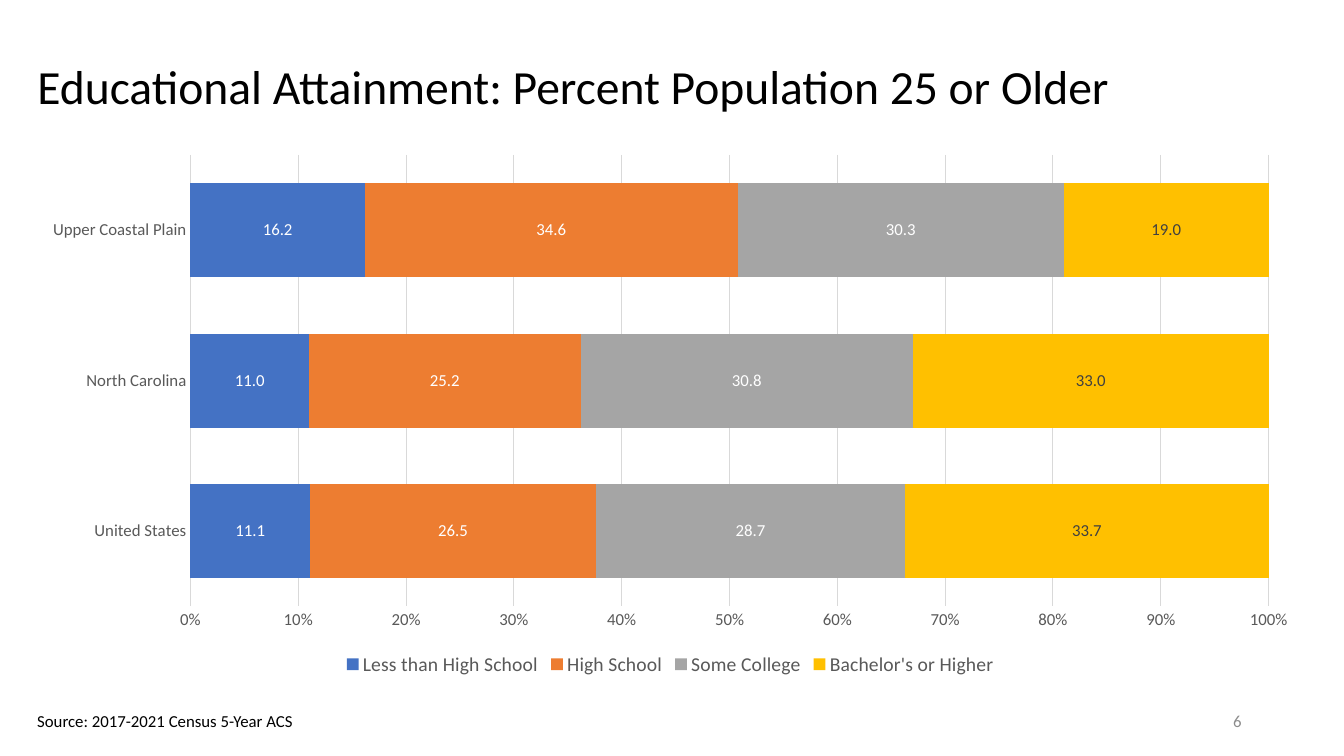
from dataclasses import dataclass

from pptx import Presentation
from pptx.chart.data import CategoryChartData
from pptx.dml.color import RGBColor
from pptx.enum import chart as ch, text as tx
from pptx.util import Pt

FONT = "Calibri"
GREY, RULE = "595959", "D9D9D9"
LEFT, WIDTH = 19.5, 918.5


@dataclass
class Level:
    name: str
    values: tuple[float, ...]
    fill: str
    label: str = "FFFFFF"


@dataclass
class Note:
    text: str
    box: tuple[float, float, float, float]
    color: str
    align: tx.PP_ALIGN
    anchor: tx.MSO_ANCHOR
    wrap: bool


REGIONS = ("United States", "North Carolina", "Upper Coastal Plain")
LEVELS = (
    Level("Less than High School", (11.1, 11.0, 16.2), "4472C4"),
    Level("High School", (26.5, 25.2, 34.6), "ED7D31"),
    Level("Some College", (28.7, 30.8, 30.3), "A5A5A5"),
    Level("Bachelor's or Higher", (33.7, 33.0, 19.0), "FFC000", "404040"),
)
NOTES = (
    Note("6", (678, 500.5, 216, 28.75), "8C8C8C",
         tx.PP_ALIGN.RIGHT, tx.MSO_ANCHOR.MIDDLE, True),
    Note("Source: 2017-2021 Census 5-Year ACS", (LEFT, 504, 200, 21.8), "000000",
         tx.PP_ALIGN.LEFT, tx.MSO_ANCHOR.TOP, False),
)


def paint(color_format, value: str) -> None:
    color_format.rgb = RGBColor.from_string(value)


def style(font, size: float, color: str) -> None:
    font.name, font.size, font.bold = FONT, Pt(size), False
    paint(font.color, color)


def rule(line) -> None:
    paint(line.color, RULE)
    line.width = Pt(0.75)


def place(shape, left: float, top: float, width: float, height: float) -> None:
    shape.left, shape.top = Pt(left), Pt(top)
    shape.width, shape.height = Pt(width), Pt(height)


def add_title(s, title: str) -> None:
    sp = s.shapes.title
    place(sp, LEFT, 24.5, WIDTH, 78.5)
    tf = sp.text_frame
    tf.text = title
    tf.vertical_anchor = tx.MSO_ANCHOR.MIDDLE
    p = tf.paragraphs[0]
    p.alignment, p.line_spacing = tx.PP_ALIGN.LEFT, 0.9
    style(p.runs[0].font, 34, "000000")


def add_note(s, note: Note) -> None:
    tf = s.shapes.add_textbox(*map(Pt, note.box)).text_frame
    tf.text = note.text
    tf.word_wrap, tf.vertical_anchor = note.wrap, note.anchor
    if not note.wrap:
        tf.auto_size = tx.MSO_AUTO_SIZE.SHAPE_TO_FIT_TEXT
    p = tf.paragraphs[0]
    p.alignment = note.align
    style(p.runs[0].font, 12, note.color)


def add_attainment_chart(s) -> None:
    data = CategoryChartData(number_format="#,##0.0")
    data.categories = REGIONS
    for level in LEVELS:
        data.add_series(level.name, level.values)
    box = map(Pt, (LEFT, 103, WIDTH, 383))
    chart = s.shapes.add_chart(ch.XL_CHART_TYPE.BAR_STACKED_100, *box, data).chart
    style(chart.font, 10, "000000")
    chart.has_title = False

    # Bars and their values
    plot = chart.plots[0]
    plot.gap_width, plot.overlap, plot.vary_by_categories = 60, 100, False
    for level, series in zip(LEVELS, plot.series):
        series.format.fill.solid()
        paint(series.format.fill.fore_color, level.fill)
        labels = series.data_labels
        labels.show_value = True
        labels.number_format, labels.number_format_is_linked = "#,##0.0", False
        labels.position = ch.XL_LABEL_POSITION.CENTER
        style(labels.font, 12, level.label)

    # Axes
    for axis in (chart.category_axis, chart.value_axis):
        axis.major_tick_mark = axis.minor_tick_mark = ch.XL_TICK_MARK.NONE
        style(axis.tick_labels.font, 12, GREY)
    rule(chart.category_axis.format.line)
    percent = chart.value_axis
    percent.minimum_scale, percent.maximum_scale, percent.major_unit = 0, 1, 0.1
    percent.has_major_gridlines = True
    rule(percent.major_gridlines.format.line)
    percent.format.line.fill.background()
    percent.tick_labels.number_format = "0%"
    percent.tick_labels.number_format_is_linked = False

    # Legend
    chart.has_legend = True
    chart.legend.position = ch.XL_LEGEND_POSITION.BOTTOM
    chart.legend.include_in_layout = False
    style(chart.legend.font, 14, GREY)


def main() -> None:
    prs = Presentation()
    prs.slide_width, prs.slide_height = Pt(960), Pt(540)
    s = prs.slides.add_slide(prs.slide_layouts[5])
    add_title(s, "Educational Attainment: Percent Population 25 or Older")
    add_attainment_chart(s)
    for note in NOTES:
        add_note(s, note)
    prs.save("out.pptx")


if __name__ == "__main__":
    main()
